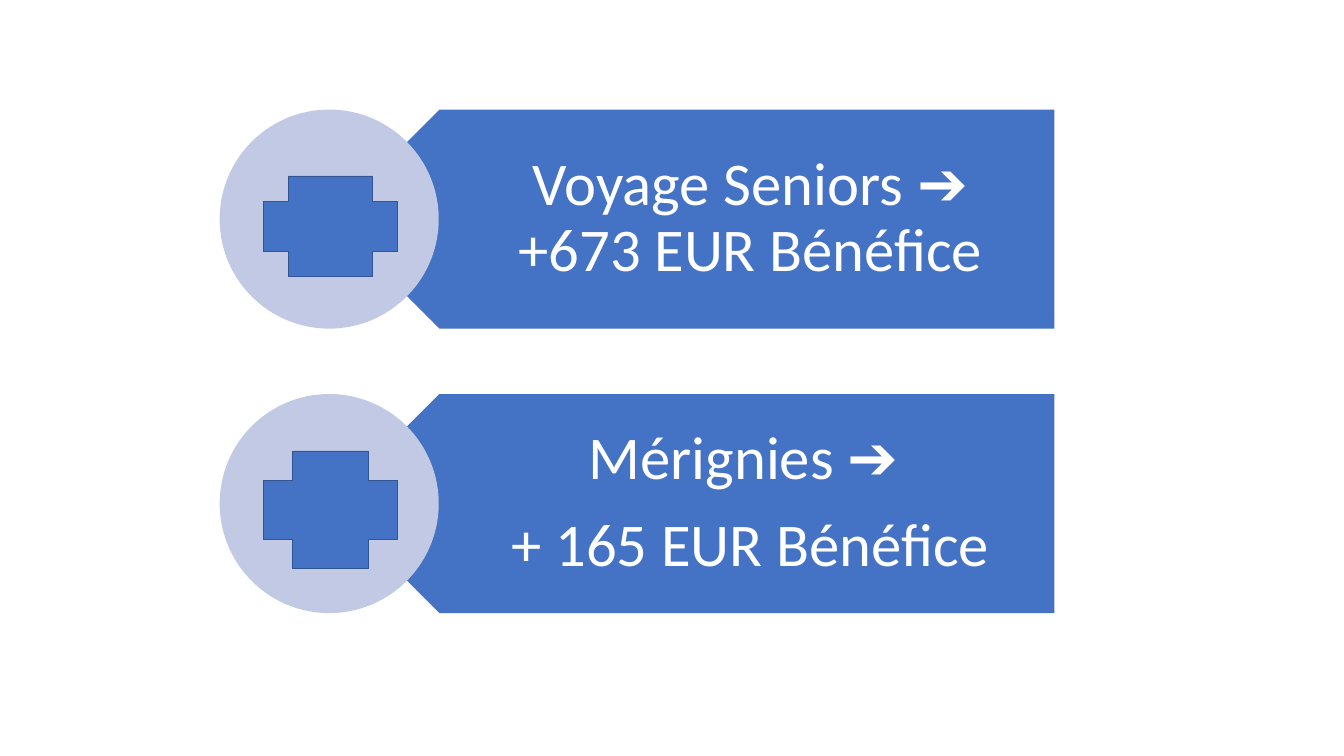
from dataclasses import dataclass

from pptx import Presentation
from pptx.dml.color import RGBColor
from pptx.enum.shapes import MSO_SHAPE
from pptx.enum.text import MSO_ANCHOR, PP_ALIGN
from pptx.util import Pt

PLATE, DISC, PLUS = MSO_SHAPE.PENTAGON, MSO_SHAPE.OVAL, MSO_SHAPE.CROSS
CENTER, MIDDLE = PP_ALIGN.CENTER, MSO_ANCHOR.MIDDLE

BLUE = RGBColor(0x44, 0x72, 0xC4)
EDGE = RGBColor(0x32, 0x54, 0x91)
PALE = RGBColor(0xC1, 0xC9, 0xE4)
WHITE = RGBColor(0xFF, 0xFF, 0xFF)

# Shared layout, in points
TOP, STEP, SIZE = 117.4, 304.8, 234.7
DISC_X, PLATE_X, TEXT_X, PLUS_X = 235.4, 353.5, 411.8, 282.2
PLATE_W, PLUS_W = 776.2, 144
RIGHT = PLATE_X + PLATE_W


@dataclass
class Item:
    lines: list[str]
    drop: float  # from the top of the row to the plus sign
    tall: float  # height of the plus sign


ITEMS = [
    Item(["Voyage Seniors ➔ +673 EUR Bénéfice"], 71.2, 108),
    Item(["Mérignies ➔ ", "+ 165 EUR Bénéfice"], 61, 126),
]


def add_form(slide, kind, x: float, y: float, w: float, h: float,
             fill: RGBColor, line: RGBColor | None = None, turn: float = 0):
    form = slide.shapes.add_shape(kind, Pt(x), Pt(y), Pt(w), Pt(h))
    form.shadow.inherit = False
    form.rotation = turn
    form.fill.solid()
    form.fill.fore_color.rgb = fill
    if line is None:
        form.line.fill.background()
    else:
        form.line.color.rgb = line
        form.line.width = Pt(1)
    return form


def add_text(slide, lines: list[str], x: float, y: float, w: float, h: float, *,
             size: float = 65, color: RGBColor = WHITE, font: str = "Calibri"):
    box = slide.shapes.add_textbox(Pt(x), Pt(y), Pt(w), Pt(h))
    frame = box.text_frame
    frame.word_wrap = True
    frame.vertical_anchor = MIDDLE
    frame.margin_left, frame.margin_right = Pt(103.7), Pt(36.7)
    frame.margin_top = frame.margin_bottom = Pt(19.4)
    for i, line in enumerate(lines):
        para = frame.add_paragraph() if i else frame.paragraphs[0]
        para.alignment = CENTER
        para.line_spacing = 0.9
        para.space_after = Pt(0.35 * size)
        run = para.add_run()
        run.text = line
        run.font.name = font
        run.font.size = Pt(size)
        run.font.color.rgb = color
    return box


def main() -> None:
    deck = Presentation()
    deck.slide_width, deck.slide_height = Pt(1440), Pt(810)
    slide = deck.slides.add_slide(deck.slide_layouts[6])

    # Arrow-shaped plates with text and disc
    tops = [TOP + i * STEP for i in range(len(ITEMS))]
    for item, y in zip(ITEMS, tops):
        add_form(slide, PLATE, PLATE_X, y, PLATE_W, SIZE, BLUE, turn=180)
        add_text(slide, item.lines, TEXT_X, y, RIGHT - TEXT_X, SIZE)
        add_form(slide, DISC, DISC_X, y, SIZE, SIZE, PALE)

    # Plus signs on the discs
    for item, y in zip(ITEMS, tops):
        add_form(slide, PLUS, PLUS_X, y + item.drop, PLUS_W, item.tall, BLUE, EDGE)

    deck.save("out.pptx")


if __name__ == "__main__":
    main()
